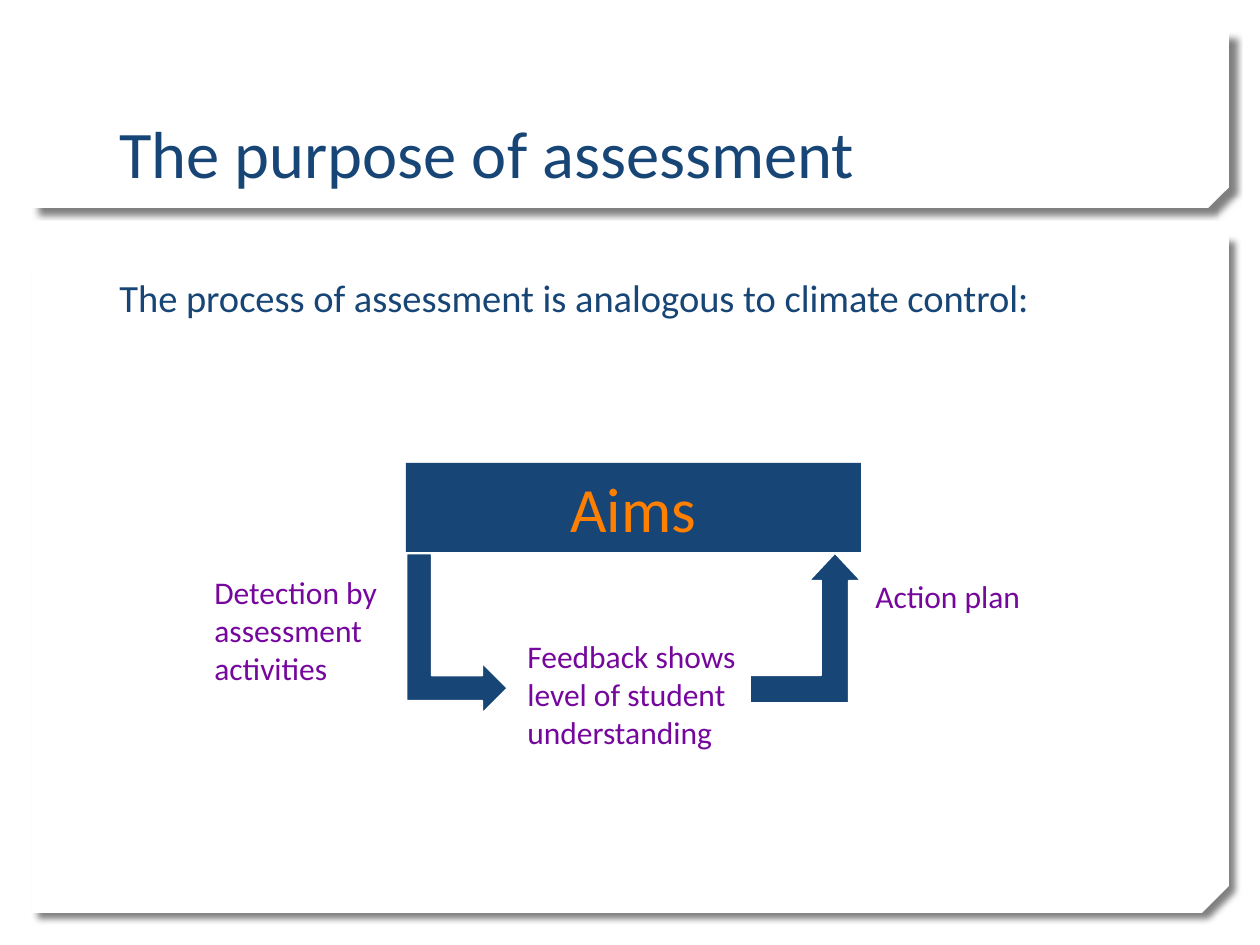
"""Build the slide on the purpose of assessment."""
import pptx
import pptx.dml.color
import pptx.enum.shapes
import pptx.enum.text
import pptx.oxml
import pptx.oxml.ns
import pptx.util

RGB = pptx.dml.color.RGBColor
WHITE = RGB(0xFF, 0xFF, 0xFF)
NAVY = RGB(0x17, 0x45, 0x76)
PURPLE = RGB(0x76, 0x07, 0x9D)
ORANGE = RGB(0xFF, 0x7F, 0x01)
KIND = pptx.enum.shapes.MSO_SHAPE
ALIGN = pptx.enum.text.PP_ALIGN
ANCHOR = pptx.enum.text.MSO_ANCHOR
PX = 914400 // 126
SHADOW = (
    f'<a:effectLst {pptx.oxml.ns.nsdecls("a")}>'
    '<a:outerShdw blurRad="50800" dist="63500" dir="2700000" algn="tl" rotWithShape="0">'
    '<a:srgbClr val="000000"><a:alpha val="50000"/></a:srgbClr>'
    '</a:outerShdw></a:effectLst>'
)

deck = pptx.Presentation()
deck.slide_width = 1260 * PX
deck.slide_height = 945 * PX
slide = deck.slides.add_slide(deck.slide_layouts[6])


def draw(kind, box, fill):
    shape = slide.shapes.add_shape(kind, *(n * PX for n in box))
    shape.shadow.inherit = False
    shape.fill.solid()
    shape.fill.fore_color.rgb = fill
    shape.line.fill.background()
    return shape


def write(shape, text, size, color, align=ALIGN.LEFT, anchor=ANCHOR.TOP):
    frame = shape.text_frame
    frame.word_wrap = True
    frame.vertical_anchor = anchor
    para = frame.paragraphs[0]
    para.text = text
    para.alignment = align
    para.font.name = "Calibri"
    para.font.size = pptx.util.Pt(size)
    para.font.color.rgb = color


for top, height, snip in ((236, 677, 0.04), (32, 176, 0.117)):
    panel = draw(KIND.SNIP_2_DIAG_RECTANGLE, (32, top, 1197, height), WHITE)
    panel.adjustments[0] = 0
    panel.adjustments[1] = snip
    props = panel._element.spPr
    props.xfrm.set("flipV", "1")
    props.remove(props.find(pptx.oxml.ns.qn("a:effectLst")))
    props.append(pptx.oxml.parse_xml(SHADOW))

for text, box in (
    ("Action plan", (863, 571, 192, 150)),
    ("Feedback shows level of student understanding", (515, 631, 238, 165)),
    ("Detection by assessment activities", (202, 567, 202, 127)),
):
    write(draw(KIND.RECTANGLE, box, WHITE), text, 18, PURPLE)

aims = draw(KIND.RECTANGLE, (406, 463, 455, 89), NAVY)
write(aims, "Aims", 36, ORANGE, ALIGN.CENTER)

for text, box, size, anchor in (
    ("The purpose of assessment", (107, 40, 1045, 158), 38, ANCHOR.BOTTOM),
    ("The process of assessment is analogous to climate control:",
     (107, 268, 1045, 552), 22, ANCHOR.TOP),
):
    label = slide.shapes.add_textbox(*(n * PX for n in box))
    write(label, text, size, NAVY, anchor=anchor)

for box, turn, wide in (
    ((377, 583, 160, 101), 90, 0.25),
    ((750, 553, 111, 150), 0, 0.234),
):
    arrow = draw(KIND.BENT_UP_ARROW, box, NAVY)
    arrow.rotation = turn
    arrow.adjustments[1] = wide
    arrow.line.color.rgb = WHITE
    arrow.line.width = pptx.util.Pt(1)

deck.save("out.pptx")
